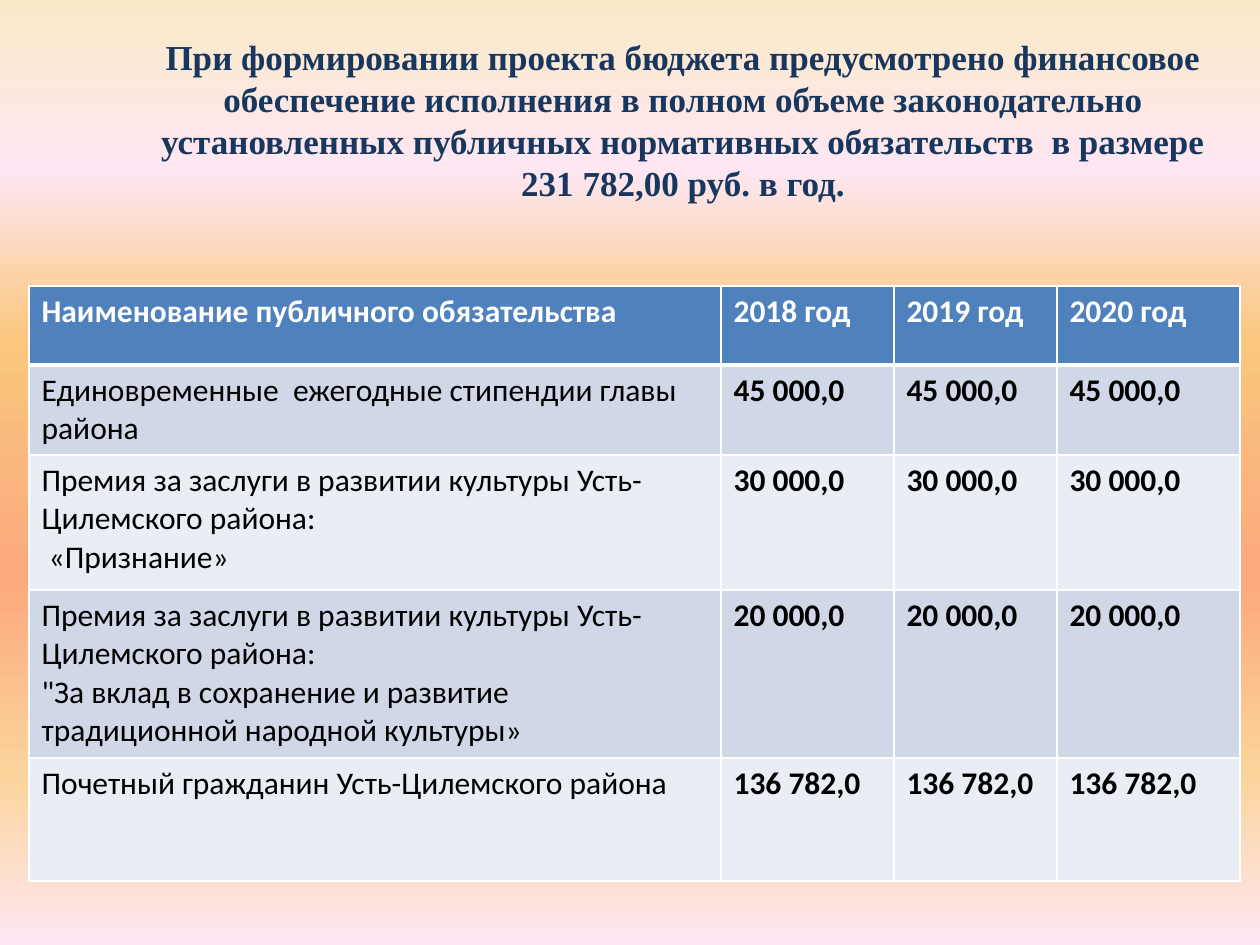
from typing import NamedTuple

import lxml.etree
import pptx
import pptx.dml.color
import pptx.enum.text
import pptx.oxml.ns
import pptx.util

RGBColor = pptx.dml.color.RGBColor
qn = pptx.oxml.ns.qn

WHITE = RGBColor(0xFF, 0xFF, 0xFF)
BLACK = RGBColor(0x00, 0x00, 0x00)
NAVY = RGBColor(0x17, 0x37, 0x5E)
HEADER_BLUE = RGBColor(0x4F, 0x81, 0xBD)
BAND_DARK = RGBColor(0xD0, 0xD8, 0xE8)
BAND_LIGHT = RGBColor(0xE9, 0xED, 0xF4)
CREAM = RGBColor(0xFB, 0xEA, 0xC7)
PINK = RGBColor(0xFE, 0xE7, 0xF2)
AMBER = RGBColor(0xFA, 0xC7, 0x7D)
CORAL = RGBColor(0xFB, 0xA9, 0x7D)
SAND = RGBColor(0xFB, 0xD4, 0x9C)

PIXELS_PER_INCH = 126
EDGES = ("a:lnL", "a:lnR", "a:lnT", "a:lnB")
COLUMN_WIDTHS = (692, 173, 163, 183)

TITLE = (
    "При формировании проекта бюджета предусмотрено финансовое обеспечение "
    "исполнения в полном объеме законодательно установленных публичных "
    "нормативных обязательств  в размере 231 782,00 руб. в год."
)
CULTURE_AWARD = "Премия за заслуги в развитии культуры Усть-Цилемского района:"


class Stop(NamedTuple):
    percent: int
    color: RGBColor


class Row(NamedTuple):
    height: int
    name: str
    values: tuple[str, ...]


STOPS = (
    Stop(0, CREAM), Stop(18, PINK), Stop(36, AMBER),
    Stop(61, CORAL), Stop(82, SAND), Stop(100, PINK),
)

ROWS = (
    Row(79, "Наименование публичного обязательства",
        ("2018 год", "2019 год", "2020 год")),
    Row(90, "Единовременные  ежегодные стипендии главы района",
        ("45 000,0",) * 3),
    Row(135, f"{CULTURE_AWARD}\n «Признание»", ("30 000,0",) * 3),
    Row(168, f'{CULTURE_AWARD}\n"За вклад в сохранение и развитие '
        "традиционной народной культуры»", ("20 000,0",) * 3),
    Row(123, "Почетный гражданин Усть-Цилемского района",
        ("136 782,0",) * 3),
)


def px(length: int) -> pptx.util.Emu:
    return pptx.util.Emu(round(length * 914400 / PIXELS_PER_INCH))


def set_values(target, values: dict) -> None:
    for name, value in values.items():
        setattr(target, name, value)


def format_text(text_frame, color: RGBColor, values: dict) -> None:
    for paragraph in text_frame.paragraphs:
        for run in paragraph.runs:
            set_values(run.font, values)
            run.font.color.rgb = color


def add_color(parent, color: RGBColor) -> None:
    lxml.etree.SubElement(parent, qn("a:srgbClr"), val=str(color))


def paint_background(slide, stops: tuple[Stop, ...]) -> None:
    fill = slide.background.fill
    fill.gradient()
    fill.gradient_angle = 270
    stop_list = slide.element.find(".//" + qn("a:gsLst"))
    for old_stop in list(stop_list):
        stop_list.remove(old_stop)
    for stop in stops:
        element = lxml.etree.SubElement(
            stop_list, qn("a:gs"), pos=str(stop.percent * 1000))
        add_color(element, stop.color)


def set_borders(cell, top: int, bottom: int) -> None:
    properties = cell._tc.get_or_add_tcPr()
    for position, (edge, points) in enumerate(zip(EDGES, (1, 1, top, bottom))):
        line = lxml.etree.Element(qn(edge), w=str(pptx.util.Pt(points)))
        add_color(lxml.etree.SubElement(line, qn("a:solidFill")), WHITE)
        properties.insert(position, line)


def fill_cell(cell, text: str, row_index: int, column_index: int) -> None:
    is_header = row_index == 0
    cell.text_frame.text = text
    format_text(cell.text_frame, WHITE if is_header else BLACK, {
        "name": "Calibri",
        "size": pptx.util.Pt(18),
        "bold": is_header or column_index > 0,
    })
    cell.fill.solid()
    band = BAND_DARK if row_index % 2 else BAND_LIGHT
    cell.fill.fore_color.rgb = HEADER_BLUE if is_header else band
    set_borders(cell, top=3 if row_index == 1 else 1,
                bottom=3 if is_header else 1)


def add_obligations_table(slide, rows: tuple[Row, ...]) -> None:
    table = slide.shapes.add_table(
        len(rows), len(COLUMN_WIDTHS), px(29), px(286),
        px(sum(COLUMN_WIDTHS)), px(sum(row.height for row in rows))).table
    for column, width in zip(table.columns, COLUMN_WIDTHS):
        column.width = px(width)
    for row_index, row in enumerate(rows):
        table.rows[row_index].height = px(row.height)
        for column_index, text in enumerate((row.name, *row.values)):
            fill_cell(table.cell(row_index, column_index), text,
                      row_index, column_index)


def format_title(title) -> None:
    set_values(title, {"left": px(137), "top": px(29),
                       "width": px(1092), "height": px(183)})
    title.text_frame.text = TITLE
    set_values(title.text_frame, {
        "word_wrap": True,
        "auto_size": pptx.enum.text.MSO_AUTO_SIZE.SHAPE_TO_FIT_TEXT,
        "vertical_anchor": pptx.enum.text.MSO_ANCHOR.TOP,
    })
    title.text_frame.paragraphs[0].alignment = pptx.enum.text.PP_ALIGN.CENTER
    format_text(title.text_frame, NAVY, {
        "name": "Times New Roman", "size": pptx.util.Pt(20), "bold": True})


def main() -> None:
    presentation = pptx.Presentation()
    set_values(presentation, {"slide_width": px(1260), "slide_height": px(945)})
    slide = presentation.slides.add_slide(presentation.slide_layouts[5])
    paint_background(slide, STOPS)
    format_title(slide.shapes.title)
    add_obligations_table(slide, ROWS)
    presentation.save("out.pptx")


if __name__ == "__main__":
    main()
